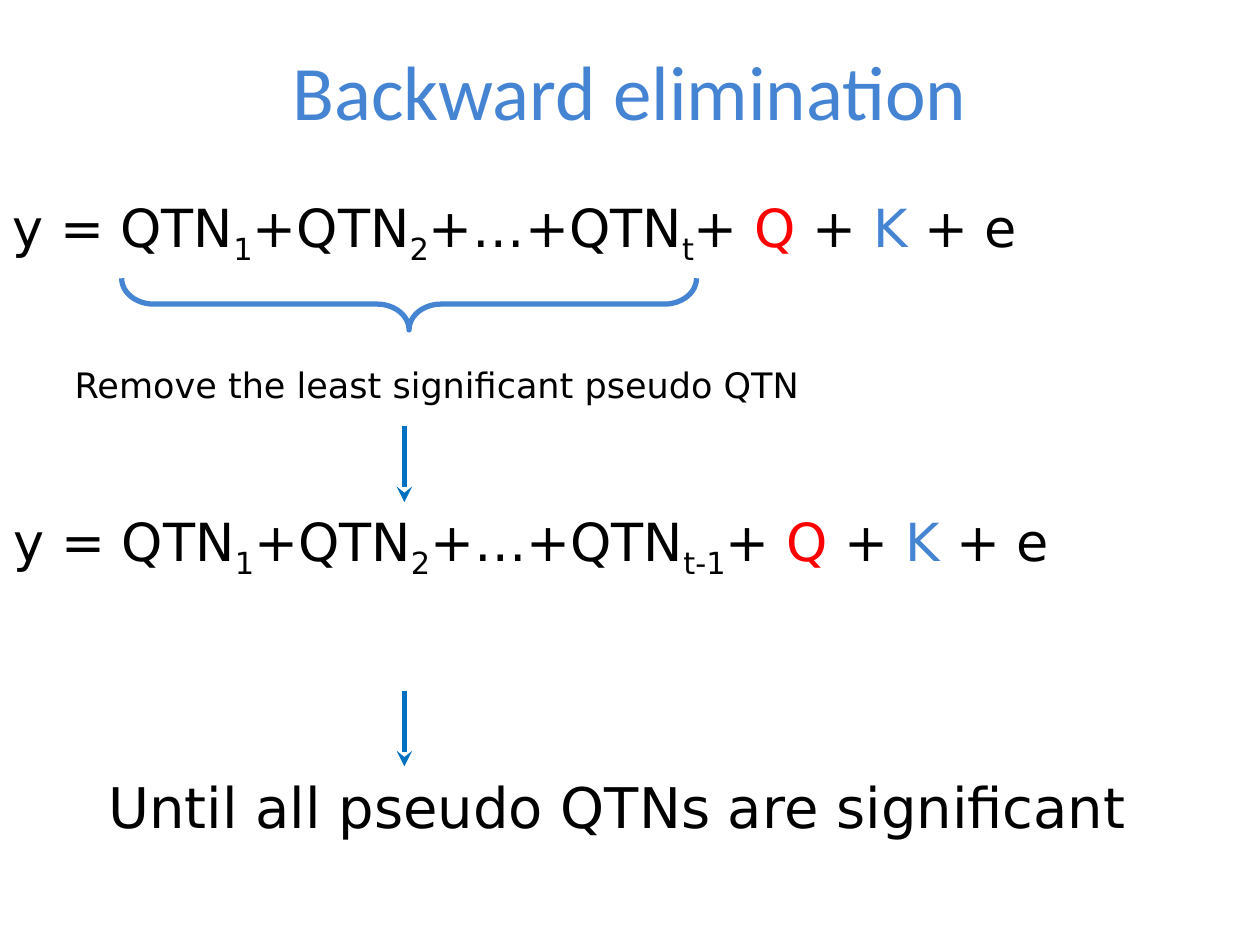
from lxml.etree import SubElement
from pptx import Presentation
from pptx.dml.color import RGBColor
from pptx.enum.shapes import MSO_CONNECTOR, MSO_SHAPE
from pptx.enum.text import MSO_ANCHOR, PP_ALIGN
from pptx.oxml.ns import qn
from pptx.util import Pt

BLACK = RGBColor(0x00, 0x00, 0x00)
RED = RGBColor(0xFF, 0x00, 0x00)
BLUE = RGBColor(0x45, 0x84, 0xD3)
ARROW_BLUE = RGBColor(0x00, 0x70, 0xC0)
ARROW_X = 231.1
SUBSCRIPT = "-25000"


def add_text(slide, runs, left, top, width, height, size=30, font="DejaVu Sans",
             align=PP_ALIGN.LEFT, anchor=MSO_ANCHOR.TOP):
    box = slide.shapes.add_textbox(Pt(left), Pt(top), Pt(width), Pt(height))
    frame = box.text_frame
    frame.word_wrap = True
    frame.vertical_anchor = anchor
    paragraph = frame.paragraphs[0]
    paragraph.alignment = align
    for text, color, is_subscript in runs:
        run = paragraph.add_run()
        run.text = text
        run.font.size = Pt(size)
        run.font.name = font
        run.font.color.rgb = color
        if is_subscript:
            run._r.get_or_add_rPr().set("baseline", SUBSCRIPT)


def add_line_of_text(slide, text, *position, color=BLACK, **text_format):
    add_text(slide, [(text, color, False)], *position, align=PP_ALIGN.CENTER, **text_format)


def add_model(slide, last_index, left, top, width):
    runs = []
    for term, index in (("y = QTN", "1"), ("+QTN", "2"), ("+…+QTN", last_index)):
        runs += [(term, BLACK, False), (index, BLACK, True)]
    for term, color in (("+ ", BLACK), ("Q ", RED), ("+ ", BLACK), ("K ", BLUE), ("+ e", BLACK)):
        runs.append((term, color, False))
    add_text(slide, runs, left, top, width, 43.6)


def add_down_arrow(slide, top, bottom):
    arrow = slide.shapes.add_connector(
        MSO_CONNECTOR.STRAIGHT, Pt(ARROW_X), Pt(top), Pt(ARROW_X), Pt(bottom))
    arrow.line.color.rgb = ARROW_BLUE
    arrow.line.width = Pt(3)
    SubElement(arrow.line._get_or_add_ln(), qn("a:tailEnd"), type="stealth")
    SubElement(arrow._element.spPr, qn("a:effectLst"))


def add_brace(slide, left, top, width, height):
    brace = slide.shapes.add_shape(
        MSO_SHAPE.LEFT_BRACE, Pt(left), Pt(top), Pt(width), Pt(height))
    brace.rotation = 270
    brace.adjustments[0] = 0.62
    brace.adjustments[1] = 0.5
    brace.shadow.inherit = False
    brace.fill.background()
    brace.line.color.rgb = BLUE
    brace.line.width = Pt(3)


def main():
    presentation = Presentation()
    presentation.slide_width = Pt(720)
    presentation.slide_height = Pt(540)
    slide = presentation.slides.add_slide(presentation.slide_layouts[6])

    add_line_of_text(slide, "Backward elimination", 36, 6, 648, 90, color=BLUE,
                     size=44, font="Calibri", anchor=MSO_ANCHOR.MIDDLE)
    add_model(slide, "t", 0, 108, 720)
    add_model(slide, "t-1", 0.8, 287.2, 719.2)
    add_line_of_text(slide, "Remove the least significant pseudo QTN",
                     15, 204, 469.5, 31.5, size=20)
    add_down_arrow(slide, 243.5, 287)
    add_brace(slide, 219, 9.5, 29.5, 328.5)
    add_line_of_text(slide, "Until all pseudo QTNs are significant",
                     10, 437.8, 686, 46, size=32)
    add_down_arrow(slide, 394.6, 438)

    presentation.save("out.pptx")


if __name__ == "__main__":
    main()
